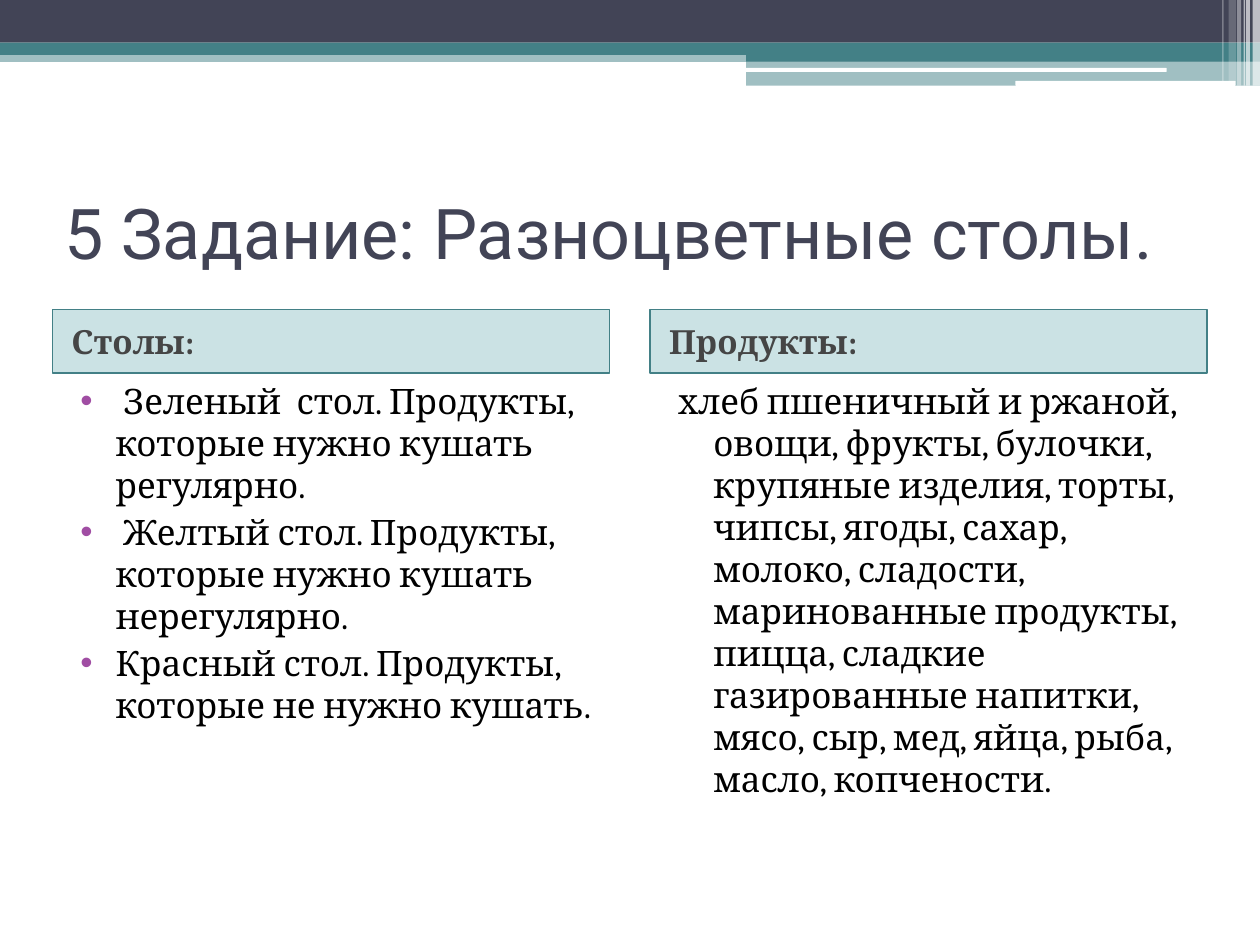
import pptx
import pptx.util
import pptx.dml.color
import pptx.enum.shapes
import pptx.enum.text
import pptx.oxml
import pptx.oxml.ns

Cm, Pt = pptx.util.Cm, pptx.util.Pt
RGBColor = pptx.dml.color.RGBColor
SHAPE = pptx.enum.shapes.MSO_SHAPE
MIDDLE = pptx.enum.text.MSO_ANCHOR.MIDDLE
TOP = pptx.enum.text.MSO_ANCHOR.TOP
LEFT = pptx.enum.text.PP_ALIGN.LEFT

NAVY = RGBColor(0x42, 0x44, 0x56)
TEAL = RGBColor(0x43, 0x80, 0x86)
AQUA = RGBColor(0x32, 0x8E, 0x97)
WHITE = RGBColor(0xFF, 0xFF, 0xFF)
GRAY = RGBColor(0x45, 0x45, 0x45)
BLACK = RGBColor(0, 0, 0)
PURPLE = RGBColor(0xA0, 0x4D, 0xA3)

TITLE = {"name": "Roboto", "size": Pt(40), "color": NAVY}
HEADING = {"name": "Cambria", "size": Pt(19), "bold": True, "color": GRAY}
BODY = {"name": "Cambria", "size": Pt(20), "color": BLACK}

TABLES = [
    " Зеленый  стол. Продукты, которые нужно кушать регулярно.",
    " Желтый стол. Продукты, которые нужно кушать нерегулярно.",
    "Красный стол. Продукты, которые не нужно кушать.",
]
PRODUCTS = [
    "хлеб пшеничный и ржаной, овощи, фрукты, булочки, крупяные изделия, торты, "
    "чипсы, ягоды, сахар, молоко, сладости, маринованные продукты, пицца, "
    "сладкие газированные напитки, мясо, сыр, мед, яйца, рыба, масло, копчености."
]


def add_element(parent, tag, **attrs):
    """Append a DrawingML element with the given attributes."""
    child = pptx.oxml.parse_xml(f"<a:{tag} {pptx.oxml.ns.nsdecls('a')}/>")
    for name, value in attrs.items():
        child.set(name, str(value))
    parent.append(child)
    return child


def add_block(slide, box, color, opacity=100, kind=SHAPE.RECTANGLE):
    """Add a filled shape without outline; box is in centimetres."""
    s = slide.shapes.add_shape(kind, *map(Cm, box))
    s.shadow.inherit = False
    s.fill.solid()
    s.fill.fore_color.rgb = color
    s.line.fill.background()
    if opacity < 100:
        clr = s.fill._xPr.find(".//" + pptx.oxml.ns.qn("a:srgbClr"))
        add_element(clr, "alpha", val=opacity * 1000)
    return s


def write_text(s, lines, style, anchor=TOP, margin=0, indent=0, bullet=False):
    """Write paragraphs into a shape with one character style."""
    tf = s.text_frame
    tf.word_wrap = True
    tf.vertical_anchor = anchor
    for i, line in enumerate(lines):
        p = tf.add_paragraph() if i else tf.paragraphs[0]
        p.alignment = LEFT
        if i:
            p.space_before = Pt(3)
        pPr = p._p.get_or_add_pPr()
        pPr.set("marL", str(Cm(margin)))
        pPr.set("indent", str(Cm(indent)))
        if bullet:
            add_element(add_element(pPr, "buClr"), "srgbClr", val=PURPLE)
            add_element(pPr, "buFont", typeface="Arial")
            add_element(pPr, "buChar", char="•")
        r = p.add_run()
        r.text = line
        for name, value in style.items():
            if name == "color":
                r.font.color.rgb = value
            else:
                setattr(r.font, name, value)


def add_banner(slide, left, top, width):
    """Draw the layered band with its white bars and right-hand stripes."""
    half = width - 10.36
    bands = [
        (0, 1.02, 0.23, TEAL, 50),
        (0, 0, 0.86, NAVY, 100),
        (0, 0.86, 0.25, TEAL, 100),
        (half, 0.99, 0.25, TEAL, 100),
        (half, 1.22, 0.51, TEAL, 50),
    ]
    for x, y, h, color, opacity in bands:
        add_block(slide, (left + x, top + y, width - x, h), color, opacity)
    for x, y, w, h in [(15.01, 1.37, 8.51, 0.08), (20.47, 1.63, 4.44, 0.1)]:
        add_block(slide, (left + x, top + y, w, h), WHITE, kind=SHAPE.ROUNDED_RECTANGLE)
    stripes = [
        (0.15, 0.15, 1.73, 65),
        (0.28, 0.08, 1.73, 65),
        (0.33, 0.03, 1.73, 60),
        (0.46, 0.08, 1.73, 40),
        (0.63, 0.15, 1.63, 20),
        (0.76, 0.03, 1.63, 30),
    ]
    for from_right, w, h, opacity in stripes:
        add_block(slide, (left + width - from_right, top, w, h), WHITE, opacity)


def add_title(slide, box, text):
    """Place the slide title in its box."""
    write_text(slide.shapes.add_textbox(*map(Cm, box)), [text], TITLE, MIDDLE)


def add_column(slide, box, heading, lines, bullet):
    """Place a tinted heading bar with body text below it."""
    left, top, width, height = box
    bar = 1.28
    s = add_block(slide, (left, top, width, bar), AQUA, 25)
    s.line.color.rgb = TEAL
    s.line.width = Pt(1)
    write_text(s, [heading], HEADING, MIDDLE, margin=0.13)
    s = slide.shapes.add_textbox(*map(Cm, (left, top + bar, width, height - bar)))
    write_text(s, lines, BODY, margin=1.02, indent=-0.71, bullet=bullet)


def main():
    """Build and save the slide."""
    prs = pptx.Presentation()
    prs.slide_width, prs.slide_height = Cm(25.4), Cm(19.05)
    slide = prs.slides.add_slide(prs.slide_layouts[6])
    add_banner(slide, 0, 0, 25.4)
    add_title(slide, (1.06, 3.18, 23.28, 2.97), "5 Задание: Разноцветные столы.")
    columns = [("Столы:", TABLES, True), ("Продукты:", PRODUCTS, False)]
    for i, (heading, lines, bullet) in enumerate(columns):
        add_column(slide, (1.06 + i * 12.05, 6.24, 11.23, 12.08), heading, lines, bullet)
    prs.save("out.pptx")


if __name__ == "__main__":
    main()
